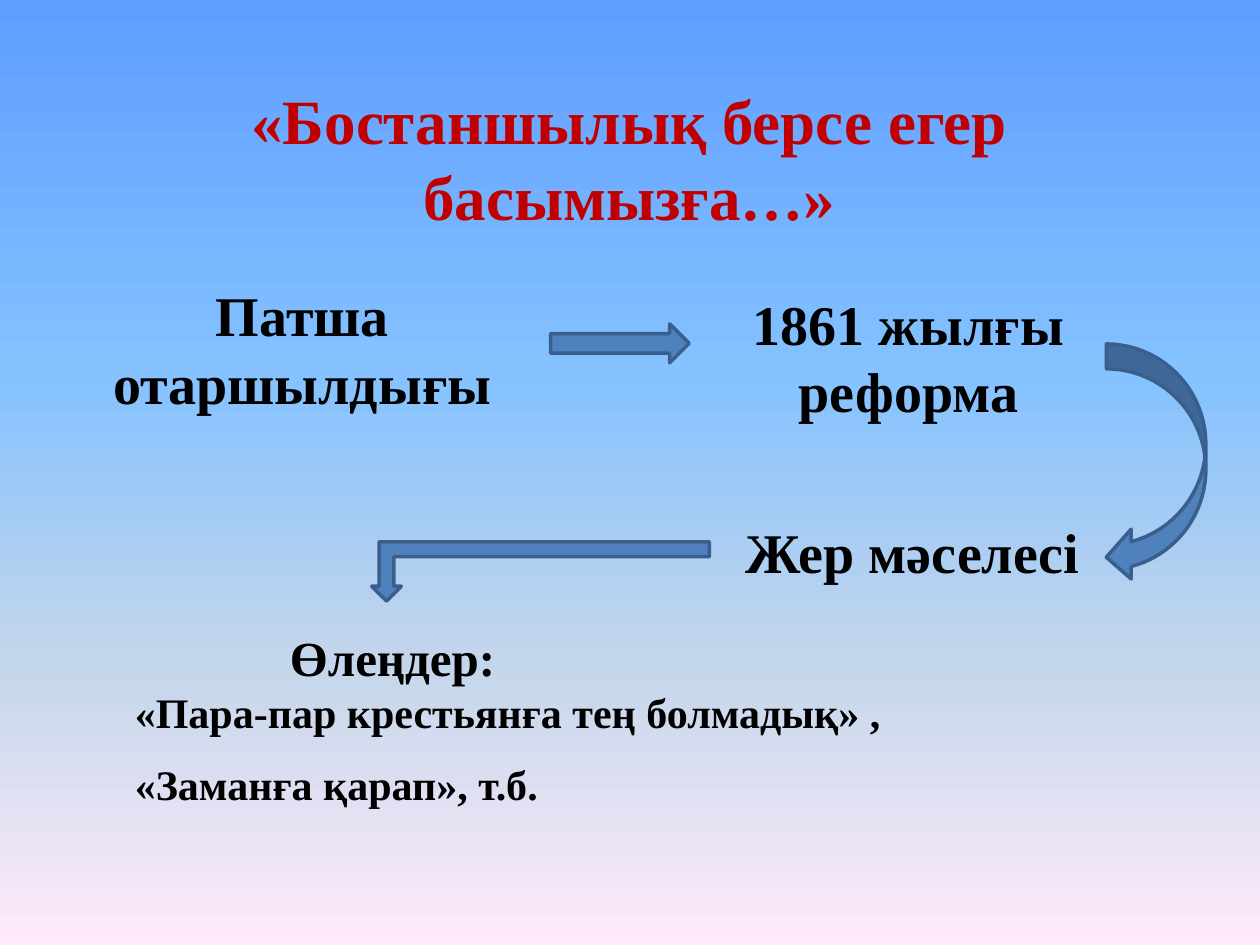
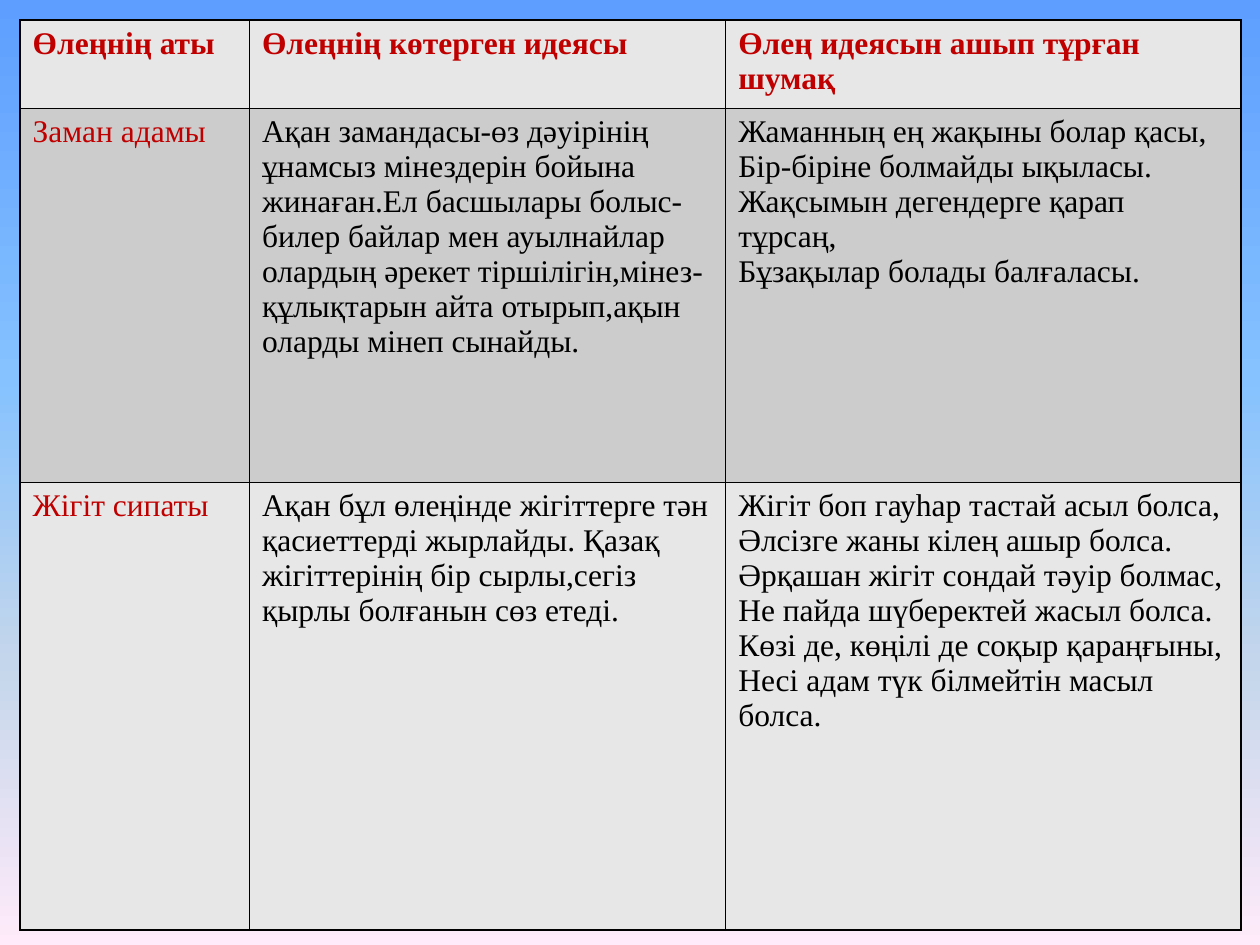
from lxml import etree
from pptx import Presentation
from pptx.dml.color import RGBColor
from pptx.enum.shapes import MSO_SHAPE
from pptx.enum.text import MSO_ANCHOR, MSO_AUTO_SIZE, PP_ALIGN
from pptx.oxml.ns import qn
from pptx.util import Inches, Pt

LEFT, CENTER = PP_ALIGN.LEFT, PP_ALIGN.CENTER
TOP, GROW = MSO_ANCHOR.TOP, MSO_AUTO_SIZE.SHAPE_TO_FIT_TEXT
RIGHT_ARROW = MSO_SHAPE.RIGHT_ARROW
CURVED_ARROW = MSO_SHAPE.CURVED_LEFT_ARROW
BENT_ARROW = MSO_SHAPE.BENT_UP_ARROW

BLACK = RGBColor(0x00, 0x00, 0x00)
RED = RGBColor(0xC0, 0x00, 0x00)
BLUE = RGBColor(0x4F, 0x81, 0xBD)
DARK_BLUE = RGBColor(0x3A, 0x5F, 0x8C)
LIGHT_GREY = RGBColor(0xE7, 0xE7, 0xE7)
MID_GREY = RGBColor(0xCC, 0xCC, 0xCC)
SKY = [
    (0, RGBColor(0x5E, 0x9E, 0xFF)),
    (40, RGBColor(0x85, 0xC2, 0xFF)),
    (70, RGBColor(0xC4, 0xD6, 0xEB)),
    (100, RGBColor(0xFF, 0xEB, 0xFA)),
]
FONT = "Times New Roman"
COLUMNS, ROWS = 100, 75  # grid over the whole slide
TITLE_AND_BODY, BLANK = 1, 6


class Deck:
    def __init__(self):
        self.prs = Presentation()
        self.prs.slide_width, self.prs.slide_height = Inches(10), Inches(7.5)
        self.slide = None
        self.paint_sky()

    def paint_sky(self):
        """Give the master a gradient that every slide inherits."""
        master = self.prs.slide_master
        fill = master.background.fill
        fill.gradient()
        fill.gradient_angle = 270
        stops = master.element.find(".//" + qn("a:gsLst"))
        for stop in list(stops):
            stops.remove(stop)
        for percent, color in SKY:
            stop = etree.SubElement(stops, qn("a:gs"), pos=str(percent * 1000))
            etree.SubElement(stop, qn("a:srgbClr"), val=str(color))

    def new_slide(self, layout):
        self.slide = self.prs.slides.add_slide(self.prs.slide_layouts[layout])

    def x(self, columns):
        return round(self.prs.slide_width * columns / COLUMNS)

    def y(self, rows):
        return round(self.prs.slide_height * rows / ROWS)

    def area(self, left, top, width, height):
        return self.x(left), self.y(top), self.x(width), self.y(height)

    def set_text(self, frame, text, size, color=BLACK, bold=True, align=CENTER):
        frame.text = text
        frame.word_wrap = True
        for paragraph in frame.paragraphs:
            paragraph.alignment = align
            for run in paragraph.runs:
                font = run.font
                font.name, font.size, font.bold = FONT, Pt(size), bold
                font.color.rgb = color

    def fill_placeholder(self, holder, area, text, size, **style):
        holder.left, holder.top, holder.width, holder.height = self.area(*area)
        frame = holder.text_frame
        self.set_text(frame, text, size, **style)
        frame.vertical_anchor, frame.auto_size = TOP, GROW

    def title(self, area, text):
        self.fill_placeholder(self.slide.shapes.title, area, text, 36, color=RED)

    def plain_list(self, area, lines):
        body = self.slide.placeholders[1]
        self.fill_placeholder(body, area, "\n".join(lines), 24, align=LEFT)
        for paragraph in body.text_frame.paragraphs:
            paragraph.space_before, paragraph.space_after = Pt(0), Pt(12)
            props = paragraph._p.get_or_add_pPr()
            props.set("marL", "0")
            props.set("indent", "0")
            etree.SubElement(props, qn("a:buNone"))

    def label(self, area, text, size=32):
        frame = self.slide.shapes.add_textbox(*self.area(*area)).text_frame
        self.set_text(frame, text, size)
        frame.auto_size = GROW

    def arrow(self, preset, area, rotation=0):
        arrow = self.slide.shapes.add_shape(preset, *self.area(*area))
        arrow.rotation = rotation
        arrow.shadow.inherit = False
        arrow.fill.solid()
        arrow.fill.fore_color.rgb = BLUE
        arrow.line.color.rgb = DARK_BLUE
        arrow.line.width = Pt(2)

    def table(self, left, top, widths, heights, content):
        area = self.area(left, top, sum(widths), sum(heights))
        table = self.slide.shapes.add_table(len(heights), len(widths), *area).table
        for column, width in zip(table.columns, widths):
            column.width = self.x(width)
        for row, height in zip(table.rows, heights):
            row.height = self.y(height)
        for r, texts in enumerate(content):
            for c, text in enumerate(texts):
                cell = table.cell(r, c)
                heading = r == 0 or c == 0
                self.set_text(cell.text_frame, text, 18, RED if heading else BLACK,
                              bold=r == 0, align=LEFT)
                self.add_borders(cell)
                cell.fill.solid()
                cell.fill.fore_color.rgb = MID_GREY if r % 2 else LIGHT_GREY

    def add_borders(self, cell):
        props = cell._tc.get_or_add_tcPr()
        for side in ("a:lnL", "a:lnR", "a:lnT", "a:lnB"):
            line = etree.SubElement(props, qn(side), w=str(Pt(1)))
            solid = etree.SubElement(line, qn("a:solidFill"))
            etree.SubElement(solid, qn("a:srgbClr"), val=str(BLACK))


def build_reform_slide(deck):
    deck.new_slide(TITLE_AND_BODY)
    deck.title((3.5, 6, 92.9, 13.1), "«Бостаншылық берсе егер басымызға…»")

    # Chain of causes
    deck.label((6.7, 21.8, 34.6, 11.8), "Патша отаршылдығы")
    deck.label((58.7, 22.5, 26.8, 11.8), "1861 жылғы реформа")
    deck.label((56.3, 40.6, 32.3, 6.4), "Жер мәселесі")
    deck.arrow(RIGHT_ARROW, (43.7, 25.7, 11, 3.1))
    deck.arrow(CURVED_ARROW, (87.8, 27.3, 7.9, 18.9))
    deck.arrow(BENT_ARROW, (29.5, 43, 26.8, 4.7), rotation=180)

    # Poems
    deck.label((15.4, 49.3, 31.5, 5.7), "Өлеңдер:", size=28)
    deck.plain_list((9.7, 54, 62, 10.5), [
        "«Пара-пар крестьянға тең болмадық» ,",
        "«Заманға қарап», т.б.",
    ])


def build_poems_slide(deck):
    deck.new_slide(BLANK)
    header = ["Өлеңнің аты", "Өлеңнің көтерген идеясы",
              "Өлең идеясын ашып тұрған шумақ"]
    man_of_the_age = [
        "Заман адамы",
        "Ақан замандасы-өз дәуірінің ұнамсыз мінездерін бойына жинаған."
        "Ел басшылары болыс-билер байлар мен ауылнайлар олардың әрекет "
        "тіршілігін,мінез-құлықтарын айта отырып,ақын оларды мінеп сынайды.",
        "Жаманның ең жақыны болар қасы,\n"
        "Бір-біріне болмайды ықыласы.\n"
        "Жақсымын дегендерге қарап тұрсаң,\n"
        "Бұзақылар болады балғаласы.",
    ]
    young_man = [
        "Жігіт сипаты",
        "Ақан бұл өлеңінде жігіттерге тән қасиеттерді жырлайды. "
        "Қазақ жігіттерінің бір сырлы,сегіз қырлы болғанын сөз етеді.",
        "Жігіт боп гауһар тастай асыл болса,\n"
        "Әлсізге жаны кілең ашыр болса.\n"
        "Әрқашан жігіт сондай тәуір болмас,\n"
        "Не пайда шүберектей жасыл болса.\n"
        "Көзі де, көңілі де соқыр қараңғыны,\n"
        "Несі адам түк білмейтін масыл болса.",
    ]
    deck.table(1.6, 1.6, [18.2, 37.8, 40.9], [7, 29.7, 35.5],
               [header, man_of_the_age, young_man])


def main():
    deck = Deck()
    build_reform_slide(deck)
    build_poems_slide(deck)
    deck.prs.save("out.pptx")


if __name__ == "__main__":
    main()
